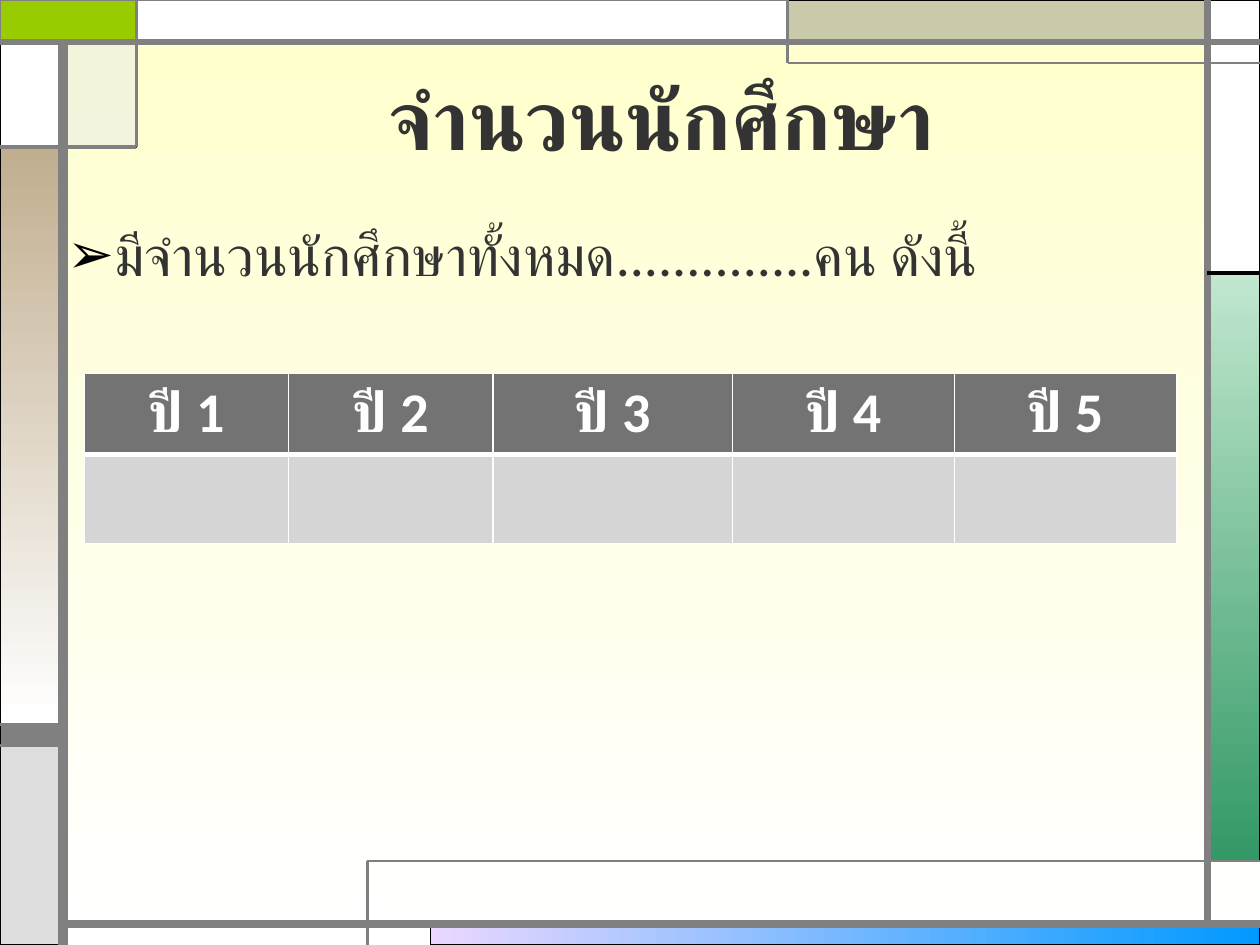
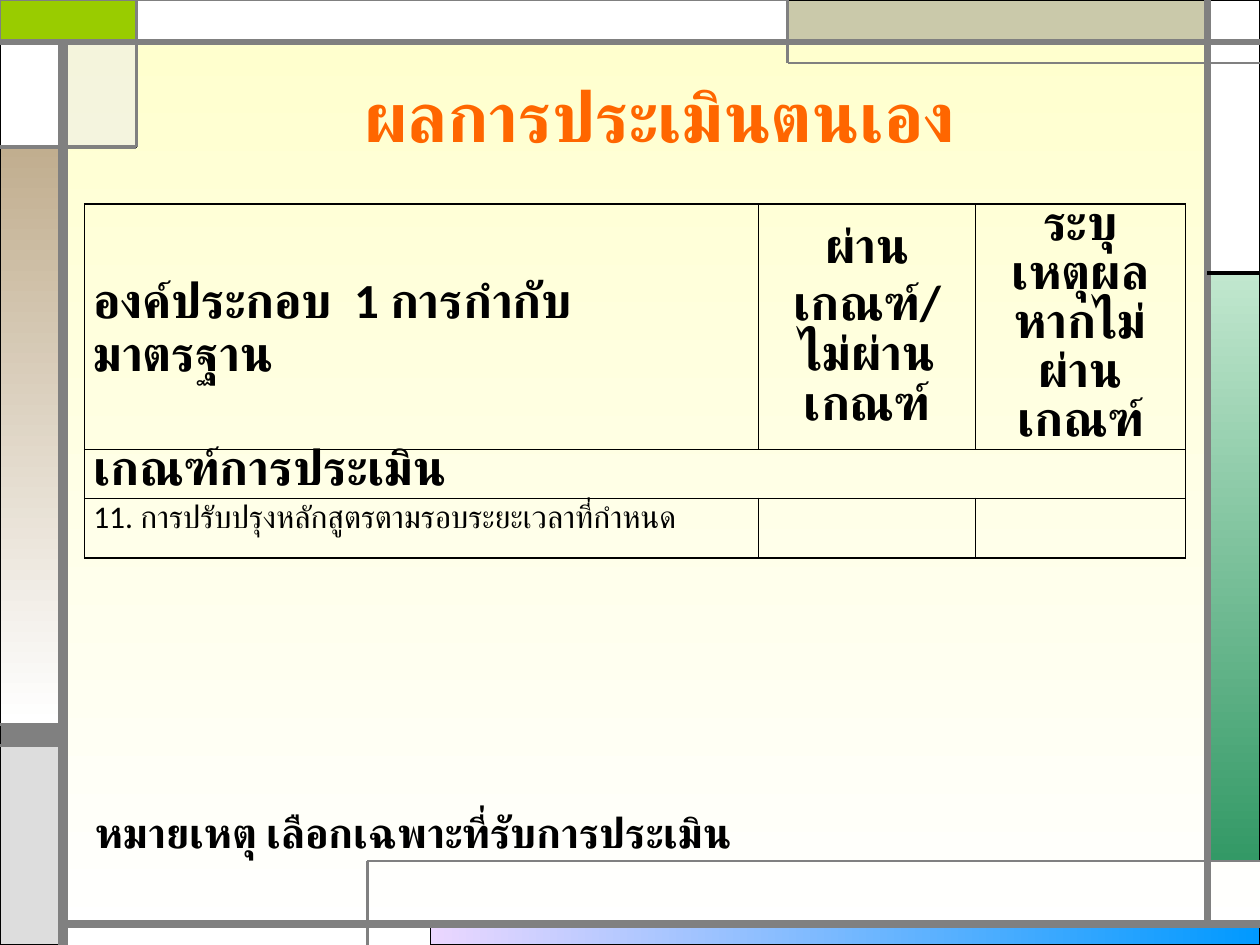
"""Two slides on student numbers and self-assessment in a shared frame."""
from dataclasses import dataclass
from typing import Optional

from lxml.etree import SubElement
from pptx import Presentation
from pptx.dml.color import RGBColor
from pptx.enum.shapes import MSO_CONNECTOR, MSO_SHAPE
from pptx.enum.text import MSO_ANCHOR, MSO_AUTO_SIZE, PP_ALIGN
from pptx.oxml import parse_xml
from pptx.oxml.ns import nsdecls, qn
from pptx.util import Inches, Pt

COLUMNS, ROWS = 120, 90
FONT = "Calibri"
BLACK, WHITE, GREY, DARK, ORANGE = "000000", "FFFFFF", "808080", "333333", "FF6600"
DOWN, RIGHTWARD = 270, 0
Box = tuple[float, float, float, float]


@dataclass
class Panel:
    """A filled rectangle of the frame, placed in columns and rows."""
    box: Box
    fill: str
    fill_end: Optional[str] = None
    angle: int = DOWN
    line: str = BLACK
    line_width: float = 0.75
    opacity: Optional[int] = None


@dataclass
class Rule:
    """A straight line of the frame from one grid point to another."""
    ends: Box
    width: float
    color: str = GREY


@dataclass
class TextStyle:
    """Character and paragraph formatting."""
    size: float
    color: str = BLACK
    bold: bool = True
    align: PP_ALIGN = PP_ALIGN.LEFT


@dataclass
class TableGrid:
    """Position and track sizes of a table in grid units."""
    left: float
    top: float
    widths: list[float]
    heights: list[float]


@dataclass
class CellText:
    """Text of one table cell with the line pitch of each paragraph in points."""
    row: int
    column: int
    text: str
    style: TextStyle
    pitches: tuple[float, ...] = ()
    top_margin: float = 0


PANELS = [
    Panel((41, 88, 79, 2), "EBD7FF", "0099FF", RIGHTWARD),
    Panel((115, 26, 5, 56), "C1E7CE", "339966"),
    Panel((0, 69, 6, 2), GREY),
    Panel((0, 71, 6, 19), "DDDDDD"),
    Panel((115, 0, 5, 26), WHITE),
    Panel((75, 0, 40, 4), "CAC9AA"),
    Panel((6, 4, 7, 10), "EAEAEA", opacity=50),
    Panel((0, 14, 6, 55), "C1AE8F", WHITE),
    Panel((0, 4, 6, 10), WHITE),
    Panel((0, 0, 13, 4), "99CC00", line=GREY, line_width=1.5),
    Panel((13, 0, 62, 4), WHITE, line=GREY),
]
RULES = [
    Rule((6, 90, 6, 4), 6),
    Rule((6, 88, 120, 88), 4.5),
    Rule((115, 88, 115, 0), 4.5),
    Rule((0, 4, 120, 4), 3),
    Rule((120, 6, 75, 6), 1.5),
    Rule((75, 6, 75, 0), 1.5),
    Rule((115, 26, 120, 26), 2.25, BLACK),
    Rule((13, 0, 13, 14), 1.5),
    Rule((13, 14, 0, 14), 2.25),
    Rule((35, 90, 35, 82), 1.5),
    Rule((35, 82, 120, 82), 1.5),
    Rule((6, 69, 0, 69), 2.25),
    Rule((6, 71, 0, 71), 2.25),
]


def color(code: str) -> RGBColor:
    """Turn a hex string into a colour."""
    return RGBColor.from_string(code)


def grid(*units: float) -> list[int]:
    """Turn columns or rows into slide lengths."""
    return [Inches(unit / 12) for unit in units]


def fill_gradient(fill, start: str, end: str, angle: int) -> None:
    """Apply a two-stop linear gradient."""
    fill.gradient()
    fill.gradient_angle = angle
    for stop, code in zip(fill.gradient_stops, (start, end)):
        stop.color.rgb = color(code)


def add_panel(slide, panel: Panel):
    """Draw one frame rectangle."""
    shape = slide.shapes.add_shape(MSO_SHAPE.RECTANGLE, *grid(*panel.box))
    shape.shadow.inherit = False
    shape.line.color.rgb = color(panel.line)
    shape.line.width = Pt(panel.line_width)
    if panel.fill_end:
        fill_gradient(shape.fill, panel.fill, panel.fill_end, panel.angle)
    else:
        shape.fill.solid()
        shape.fill.fore_color.rgb = color(panel.fill)
    if panel.opacity is not None:
        solid = shape.element.xpath("./p:spPr/a:solidFill/a:srgbClr")[0]
        SubElement(solid, qn("a:alpha"), val=str(panel.opacity * 1000))
    return shape


def add_rule(slide, rule: Rule):
    """Draw one frame line."""
    connector = slide.shapes.add_connector(MSO_CONNECTOR.STRAIGHT, *grid(*rule.ends))
    connector.line.color.rgb = color(rule.color)
    connector.line.width = Pt(rule.width)
    SubElement(connector.element.spPr, qn("a:effectLst"))
    return connector


def build_master(presentation, slide) -> None:
    """Set the background and move the frame into the slide master."""
    master = presentation.slide_master
    fill_gradient(master.background.fill, "FFFFCC", WHITE, DOWN)
    frame = [add_panel(slide, panel) for panel in PANELS]
    frame += [add_rule(slide, rule) for rule in RULES]
    for index, shape in enumerate(frame):
        shape.element.xpath(".//p:cNvPr")[0].set("id", str(100 + index))
        master.shapes.element.insert(2 + index, shape.element)


def write_text(text_frame, text: str, style: TextStyle) -> None:
    """Write text and format every run of it."""
    text_frame.text = text
    for paragraph in text_frame.paragraphs:
        paragraph.alignment = style.align
        for run in paragraph.runs:
            run.font.name = FONT
            run.font.size = Pt(style.size)
            run.font.bold = style.bold
            run.font.color.rgb = color(style.color)
            SubElement(run.font._element, qn("a:cs"), typeface=FONT)


def place_text(shape, box: Box, text: str, style: TextStyle) -> None:
    """Move a text shape and write into it."""
    shape.left, shape.top, shape.width, shape.height = grid(*box)
    shape.text_frame.word_wrap = True
    shape.text_frame.auto_size = MSO_AUTO_SIZE.NONE
    write_text(shape.text_frame, text, style)


def set_title(slide, box: Box, text: str, size: float, code: str) -> None:
    """Fill the centred title placeholder."""
    place_text(slide.shapes.title, box, text, TextStyle(size, code, align=PP_ALIGN.CENTER))
    slide.shapes.title.text_frame.vertical_anchor = MSO_ANCHOR.MIDDLE


def set_bullet(paragraph, character: str, code: str) -> None:
    """Give a paragraph a coloured bullet."""
    properties = paragraph._p.get_or_add_pPr()
    bullet_color = SubElement(properties, qn("a:buClr"))
    SubElement(bullet_color, qn("a:srgbClr"), val=code)
    SubElement(properties, qn("a:buChar"), char=character)


def add_grid_table(slide, layout: TableGrid):
    """Add an unbanded table with the given tracks."""
    size = (sum(layout.widths), sum(layout.heights))
    table = slide.shapes.add_table(
        len(layout.heights), len(layout.widths), *grid(layout.left, layout.top, *size)
    ).table
    table.horz_banding = False
    for column, width in zip(table.columns, grid(*layout.widths)):
        column.width = width
    for row, height in zip(table.rows, grid(*layout.heights)):
        row.height = height
    return table


def set_borders(cell, code: str, top: float = 1, bottom: float = 1) -> None:
    """Draw the four borders of a cell."""
    properties = cell._tc.get_or_add_tcPr()
    sides = {"lnL": 1, "lnR": 1, "lnT": top, "lnB": bottom}
    for index, (side, width) in enumerate(sides.items()):
        properties.insert(index, parse_xml(
            f'<a:{side} {nsdecls("a")} w="{Pt(width)}"><a:solidFill>'
            f'<a:srgbClr val="{code}"/></a:solidFill></a:{side}>'))


def build_student_slide(slide) -> None:
    """Fill the slide with student numbers by year."""
    set_title(slide, (12, 3.6, 102, 15), "จำนวนนักศึกษา", 48, DARK)
    body = slide.placeholders[1]
    place_text(body, (5.2, 20.4, 108, 59.4),
               "มีจำนวนนักศึกษาทั้งหมด..............คน ดังนี้", TextStyle(32, DARK, bold=False))
    set_bullet(body.text_frame.paragraphs[0], "➢", BLACK)

    table = add_grid_table(
        slide, TableGrid(8.05, 35.55, [19.45, 19.45, 22.8, 21.15, 21.15], [7.55, 8.5]))
    heading = TextStyle(32, WHITE, align=PP_ALIGN.CENTER)
    for year in range(1, 6):
        header, value = (table.cell(row, year - 1) for row in range(2))
        write_text(header.text_frame, f"ปี {year}", heading)
        for cell, code in ((header, "737373"), (value, "D5D5D5")):
            cell.fill.solid()
            cell.fill.fore_color.rgb = color(code)
        set_borders(header, WHITE, bottom=3)
        set_borders(value, WHITE, top=3)


def build_assessment_slide(slide) -> None:
    """Fill the slide with the self-assessment criteria."""
    set_title(slide, (11.8, 3.4, 102, 15), "ผลการประเมินตนเอง", 40, ORANGE)
    table = add_grid_table(slide, TableGrid(8.05, 19.45, [64.2, 20.65, 20], [23.3, 4.65, 5.7]))
    for cell in table.iter_cells():
        cell.margin_left = cell.margin_right = Inches(0.07)
        cell.margin_top = cell.margin_bottom = 0
        cell.fill.background()
        set_borders(cell, BLACK)
    table.cell(1, 0).merge(table.cell(1, 2))

    heading = TextStyle(28)
    centred = TextStyle(28, align=PP_ALIGN.CENTER)
    entries = [
        CellText(0, 0, "องค์ประกอบ  1 การกำกับมาตรฐาน", heading, (30,), 0.08),
        CellText(0, 1, "ผ่านเกณฑ์/\nไม่ผ่านเกณฑ์", centred, (32.5, 28.5)),
        CellText(0, 2, "ระบุเหตุผล\nหากไม่ผ่านเกณฑ์", centred, (28, 28)),
        CellText(1, 0, "เกณฑ์การประเมิน", heading, (28,)),
        CellText(2, 0, "11. การปรับปรุงหลักสูตรตามรอบระยะเวลาที่กำหนด", TextStyle(18, bold=False)),
    ]
    for entry in entries:
        cell = table.cell(entry.row, entry.column)
        write_text(cell.text_frame, entry.text, entry.style)
        for paragraph, pitch in zip(cell.text_frame.paragraphs, entry.pitches):
            paragraph.line_spacing = Pt(pitch)
        cell.margin_top = Inches(entry.top_margin)
        cell.vertical_anchor = MSO_ANCHOR.MIDDLE if entry.row == 0 else MSO_ANCHOR.TOP

    box = (7.9, 76.2, 102, 6)
    note = slide.shapes.add_textbox(*grid(*box))
    place_text(note, box, "หมายเหตุ เลือกเฉพาะที่รับการประเมิน", TextStyle(24))


def main() -> None:
    """Build and save the presentation."""
    presentation = Presentation()
    presentation.slide_width, presentation.slide_height = grid(COLUMNS, ROWS)
    layouts = presentation.slide_layouts
    students = presentation.slides.add_slide(layouts.get_by_name("Title and Content"))
    assessment = presentation.slides.add_slide(layouts.get_by_name("Title Only"))
    build_master(presentation, students)
    build_student_slide(students)
    build_assessment_slide(assessment)
    presentation.save("out.pptx")


if __name__ == "__main__":
    main()
